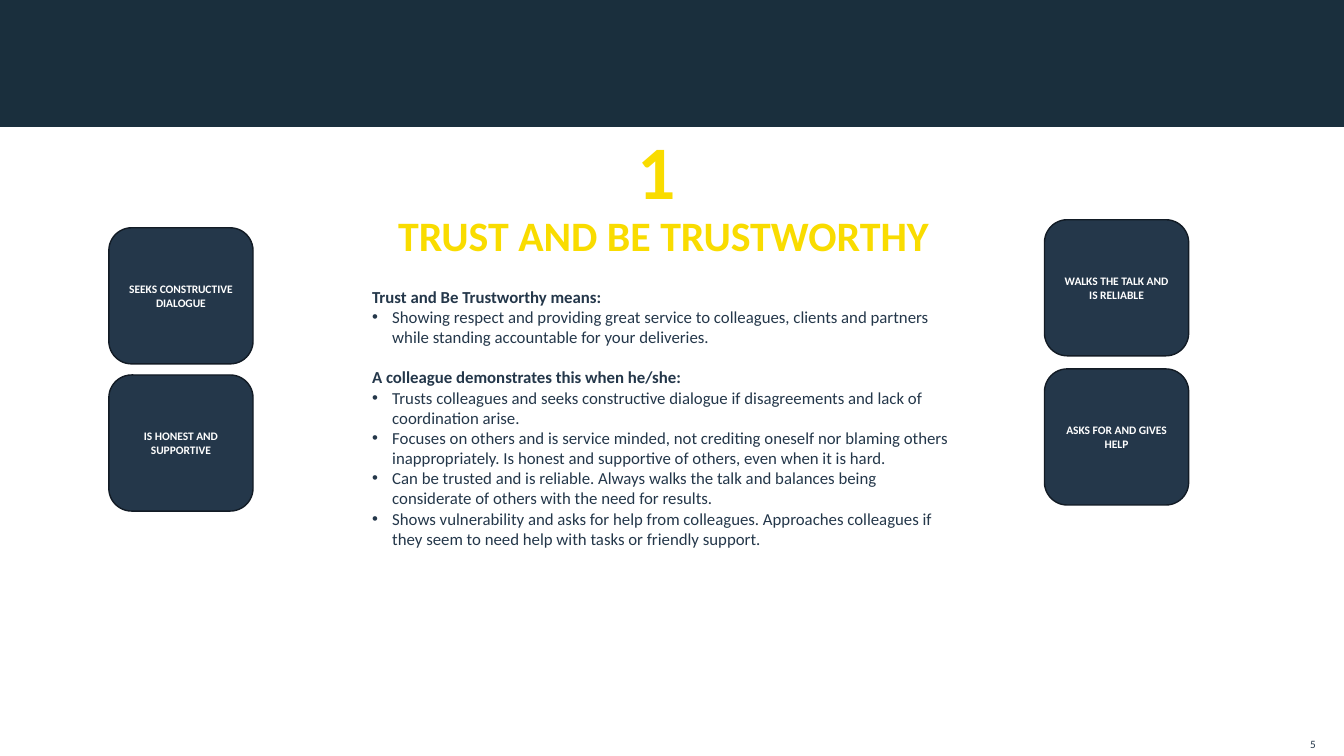
from lxml import etree
from pptx import Presentation
from pptx.dml.color import RGBColor
from pptx.enum import shapes, text
from pptx.oxml import ns
from pptx.util import Inches, Pt

NAVY = RGBColor(0x24, 0x37, 0x4A)
BANNER = RGBColor(0x1A, 0x2F, 0x3D)
EDGE = RGBColor(0x12, 0x1B, 0x25)
YELLOW = RGBColor(0xF9, 0xDC, 0x00)
WHITE = RGBColor(0xFF, 0xFF, 0xFF)
FONT = "Calibri"

SECTIONS = [
    ("Trust and Be Trustworthy means:", [
        "Showing respect and providing great service to colleagues, clients and partners "
        "while standing accountable for your deliveries.",
    ]),
    ("A colleague demonstrates this when he/she:", [
        "Trusts colleagues and seeks constructive dialogue if disagreements and lack of "
        "coordination arise.",
        "Focuses on others and is service minded, not crediting oneself nor blaming others "
        "inappropriately. Is honest and supportive of others, even when it is hard.",
        "Can be trusted and is reliable. Always walks the talk and balances being "
        "considerate of others with the need for results.",
        "Shows vulnerability and asks for help from colleagues. Approaches colleagues if "
        "they seem to need help with tasks or friendly support.",
    ]),
]


def place(shape, box):
    """Move a shape to a box of left, top, width and height in inches."""
    shape.left, shape.top, shape.width, shape.height = map(Inches, box)


def style(paragraph, size, color, bold=False, align=text.PP_ALIGN.LEFT):
    """Format every run of a paragraph and align it."""
    paragraph.alignment = align
    for run in paragraph.runs:
        run.font.name = FONT
        run.font.size = Pt(size)
        run.font.bold = bold
        run.font.color.rgb = color


def set_bullet(paragraph, char=None):
    """Give a paragraph a hanging bullet, or none."""
    props = paragraph._p.get_or_add_pPr()
    indent = Inches(0.2) if char else 0
    props.set("marL", str(indent))
    props.set("indent", str(-indent))
    if char:
        etree.SubElement(props, ns.qn("a:buFont")).set("typeface", "Arial")
        etree.SubElement(props, ns.qn("a:buChar")).set("char", char)
    else:
        etree.SubElement(props, ns.qn("a:buNone"))


def add_block(slide, kind, box, fill):
    """Draw a flat filled shape without outline."""
    block = slide.shapes.add_shape(kind, *map(Inches, box))
    block.shadow.inherit = False
    block.fill.solid()
    block.fill.fore_color.rgb = fill
    block.line.fill.background()
    return block


def add_label(slide, box, words, size, color, bold=False, align=text.PP_ALIGN.LEFT):
    """Write one line of text in a box."""
    frame = slide.shapes.add_textbox(*map(Inches, box)).text_frame
    frame.word_wrap = True
    frame.text = words
    style(frame.paragraphs[0], size, color, bold, align)
    return frame


def add_page_number(slide, box, number):
    """Write the page number flush with the lower right of its box."""
    frame = add_label(slide, box, number, 8, NAVY, align=text.PP_ALIGN.RIGHT)
    frame.margin_left = frame.margin_top = frame.margin_right = frame.margin_bottom = 0
    frame.vertical_anchor = text.MSO_ANCHOR.BOTTOM


def fill_heading(heading, box, words):
    """Set the value's name in the title placeholder."""
    place(heading, box)
    frame = heading.text_frame
    frame.text = words
    frame.auto_size = text.MSO_AUTO_SIZE.NONE
    frame.vertical_anchor = text.MSO_ANCHOR.TOP
    frame.paragraphs[0].line_spacing = 0.9
    style(frame.paragraphs[0], 29.9, YELLOW, True, text.PP_ALIGN.CENTER)


def fill_meaning(meaning, box, sections):
    """Set the bold leads and their bullets in the body placeholder."""
    place(meaning, box)
    frame = meaning.text_frame
    frame.auto_size = text.MSO_AUTO_SIZE.NONE
    lines = [(line, line == lead) for lead, points in sections for line in (lead, *points)]
    frame.text = "\n".join(line for line, _ in lines)
    for index, (paragraph, (_, is_lead)) in enumerate(zip(frame.paragraphs, lines)):
        paragraph.space_before = Pt(14.6 if is_lead and index else 0)
        set_bullet(paragraph, None if is_lead else "•")
        style(paragraph, 12, NAVY, is_lead)


def add_behaviours(slide, box, gap, behaviours):
    """Stack equal rounded tiles down a column box."""
    left, top, width, height = box
    tile_height = (height - gap * (len(behaviours) - 1)) / len(behaviours)
    for row, behaviour in enumerate(behaviours):
        tile = add_block(slide, shapes.MSO_SHAPE.ROUNDED_RECTANGLE,
                         (left, top + row * (tile_height + gap), width, tile_height), NAVY)
        tile.line.color.rgb = EDGE
        tile.line.width = Pt(1)
        frame = tile.text_frame
        frame.word_wrap = True
        frame.text = behaviour
        frame.vertical_anchor = text.MSO_ANCHOR.MIDDLE
        style(frame.paragraphs[0], 8.2, WHITE, True, text.PP_ALIGN.CENTER)


def build_value_slide(deck):
    """Lay out the slide for one company value."""
    slide = deck.slides.add_slide(deck.slide_layouts[1])
    heading, meaning = slide.placeholders
    add_block(slide, shapes.MSO_SHAPE.RECTANGLE, (0, 0, 13.33, 1.26), BANNER)
    add_page_number(slide, (11.79, 7.29, 1.26, 0.16), "5")
    add_label(slide, (6.22, 1.18, 1.07, 1.01), "1", 54, YELLOW, True)
    fill_heading(heading, (3.31, 2.09, 6.54, 0.73), "TRUST AND BE TRUSTWORTHY")
    fill_meaning(meaning, (3.59, 2.79, 5.99, 5.73), SECTIONS)
    add_behaviours(slide, (10.36, 2.18, 1.43, 2.83), 0.13,
                   ["WALKS THE TALK AND IS RELIABLE", "ASKS FOR AND GIVES HELP"])
    add_behaviours(slide, (1.08, 2.26, 1.43, 2.81), 0.11,
                   ["SEEKS CONSTRUCTIVE DIALOGUE", "IS HONEST AND SUPPORTIVE"])


def main():
    """Build and save the deck."""
    deck = Presentation()
    deck.slide_width, deck.slide_height = Inches(13.33), Inches(7.5)
    build_value_slide(deck)
    deck.save("out.pptx")


if __name__ == "__main__":
    main()
